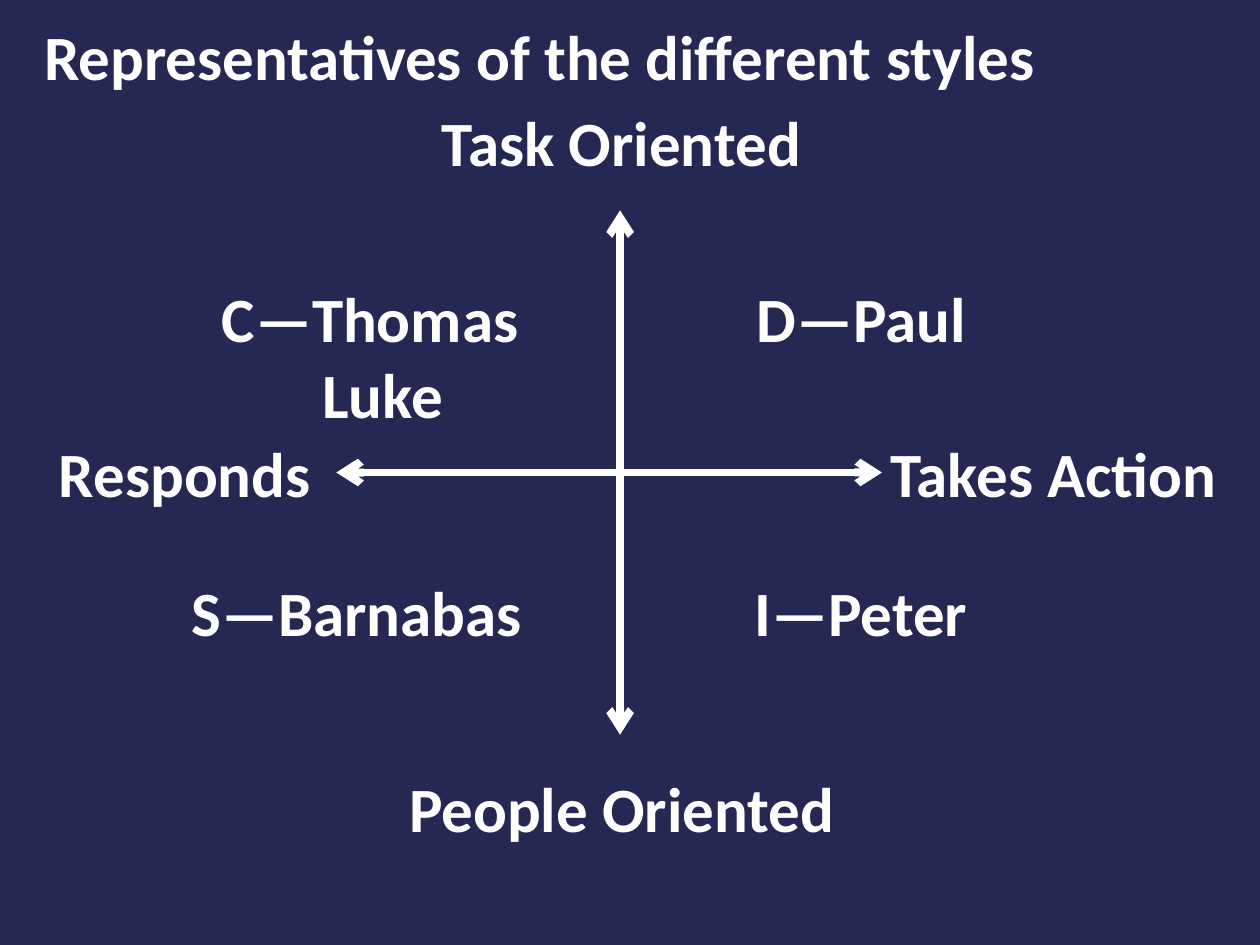
from lxml import etree
from pptx import Presentation
from pptx.dml.color import RGBColor
from pptx.enum import shapes, text
from pptx.oxml import ns
from pptx.util import Cm, Pt

NAVY = RGBColor(0x24, 0x28, 0x52)
WHITE = RGBColor(0xFF, 0xFF, 0xFF)
LINE_HEIGHT = 1.8


def add_label(s, left, top, width, lines, indent=0):
    """Add bold lines of text; those after the first are indented."""
    height = LINE_HEIGHT + 1.52 * (len(lines) - 1)
    sp = s.shapes.add_textbox(Cm(left), Cm(top), Cm(width), Cm(height))
    tf = sp.text_frame
    tf.word_wrap = False
    tf.auto_size = text.MSO_AUTO_SIZE.SHAPE_TO_FIT_TEXT
    tf.text = "\n".join(lines)
    for p in tf.paragraphs:
        p.font.name = "Calibri"
        p.font.size = Pt(36)
        p.font.bold = True
        p.font.color.rgb = WHITE
    for p in tf.paragraphs[1:]:
        p._p.get_or_add_pPr().set("marL", str(Cm(indent)))


def add_axis(s, x1, y1, x2, y2):
    axis = s.shapes.add_connector(
        shapes.MSO_CONNECTOR.STRAIGHT, Cm(x1), Cm(y1), Cm(x2), Cm(y2))
    axis.line.color.rgb = WHITE
    axis.line.width = Pt(4.5)
    ln = axis.line._get_or_add_ln()
    for end in ("a:headEnd", "a:tailEnd"):
        etree.SubElement(ln, ns.qn(end), type="arrow")
    etree.SubElement(axis._element.spPr, ns.qn("a:effectLst"))


def add_axes(s, left, top, width, height):
    center_x, center_y = left + 5.72, top + height / 2
    add_axis(s, center_x, top, center_x, top + height)
    add_axis(s, left, center_y, left + width, center_y)


def add_axis_labels(s, left, top, width, height):
    """Name the ends of the axes that fill the given box."""
    middle = top + height / 2 - LINE_HEIGHT / 2
    add_label(s, left + 1.88, top - 2.28, 7.82, ["Task Oriented"])
    add_label(s, left + 1.22, top + height + 0.58, 9.17, ["People Oriented"])
    add_label(s, left + width - 0.08, middle, 7.16, ["Takes Action"])
    add_label(s, left - 5.84, middle, 5.94, ["Responds"])


def add_quadrants(s, left, top, width, height):
    """Name the people in the four quarters of the given box."""
    upper, lower = top + 1.27, top + height - 3.38
    right = left + width - 2.78
    add_label(s, right, upper, 4.78, ["D—Paul"])
    add_label(s, right - 0.04, lower, 4.83, ["I—Peter"])
    add_label(s, left - 3.17, lower, 7.24, ["S—Barnabas"])
    add_label(s, left - 2.56, upper, 6.55, ["C—Thomas", "Luke"], indent=2.03)


def main():
    prs = Presentation()
    prs.slide_width, prs.slide_height = Cm(25.4), Cm(19.05)
    s = prs.slides.add_slide(prs.slide_layouts[6])
    s.background.fill.solid()
    s.background.fill.fore_color.rgb = NAVY

    chart_box = (6.78, 4.24, 11, 10.57)
    add_axes(s, *chart_box)
    add_axis_labels(s, *chart_box)
    add_quadrants(s, *chart_box)
    add_label(s, 0.64, 0.23, 20.75, ["Representatives of the different styles"])
    prs.save("out.pptx")


if __name__ == "__main__":
    main()
